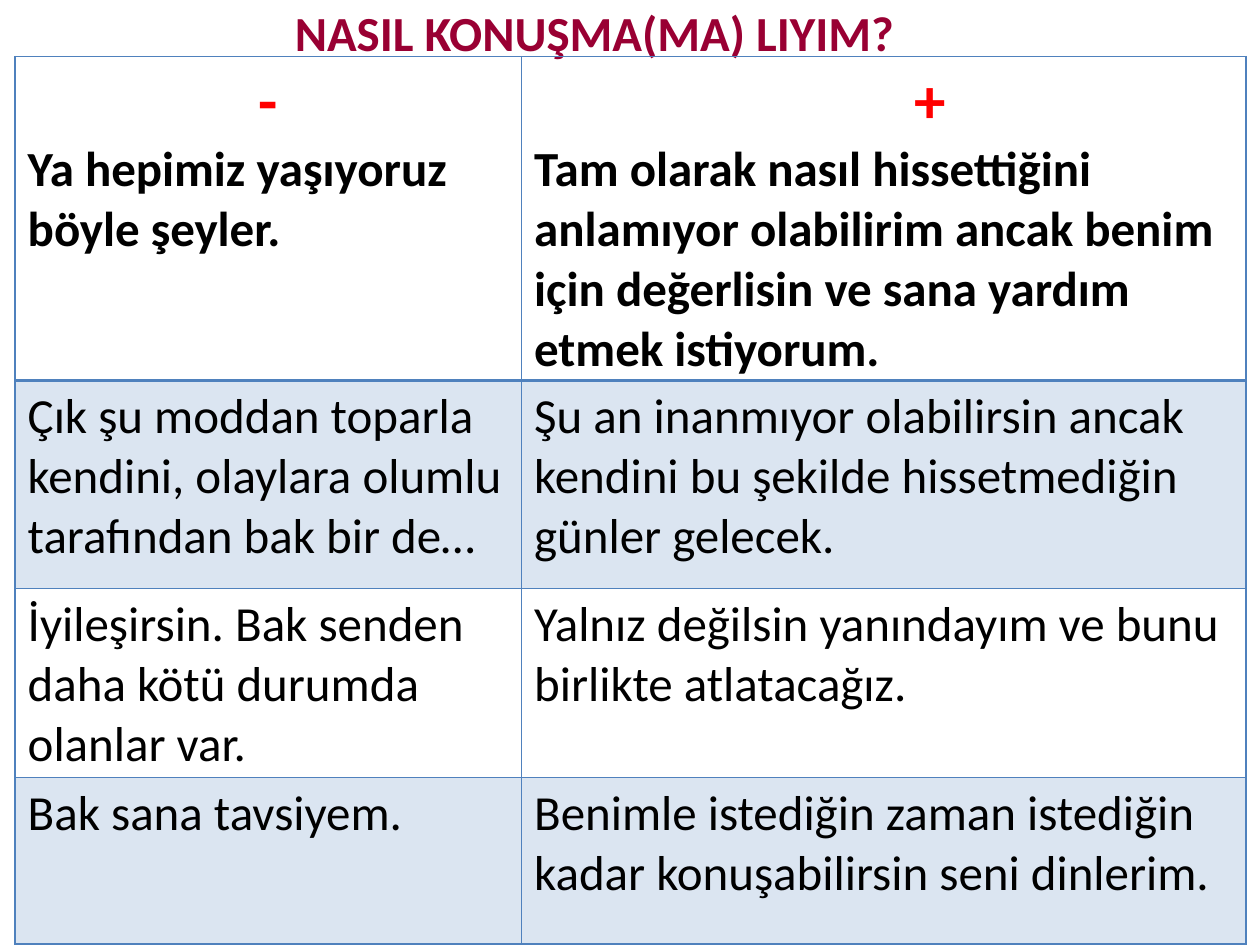
from lxml import etree
from pptx import Presentation
from pptx.dml.color import RGBColor
from pptx.enum.text import MSO_ANCHOR, MSO_AUTO_SIZE, PP_ALIGN
from pptx.oxml.ns import qn
from pptx.util import Inches, Pt

LEFT, CENTER = PP_ALIGN.LEFT, PP_ALIGN.CENTER
MIDDLE = MSO_ANCHOR.MIDDLE
FIT_SHAPE = MSO_AUTO_SIZE.SHAPE_TO_FIT_TEXT
TITLE_ONLY = 5

TITLE = "NASIL KONUŞMA(MA) LIYIM?"
SIGNS = ("-", "+")
ADVICE = [
    ("Ya hepimiz yaşıyoruz böyle şeyler.",
     "Tam olarak nasıl hissettiğini anlamıyor olabilirim ancak benim için "
     "değerlisin ve sana yardım etmek istiyorum."),
    ("Çık şu moddan toparla kendini, olaylara olumlu tarafından bak bir de…",
     "Şu an inanmıyor olabilirsin ancak kendini bu şekilde hissetmediğin "
     "günler gelecek."),
    ("İyileşirsin. Bak senden daha kötü durumda olanlar var.",
     "Yalnız değilsin yanındayım ve bunu birlikte atlatacağız."),
    ("Bak sana tavsiyem.",
     "Benimle istediğin zaman istediğin kadar konuşabilirsin seni dinlerim."),
]
COLUMN_WIDTHS = (4.02, 5.75)
ROW_HEIGHTS = (2.57, 1.65, 1.5, 1.32)
PLUS_INDENT = 3.02


def color(value):
    return RGBColor.from_string(value)


class AdviceSlide:
    font = "Calibri"
    text_size, sign_size = 28, 36
    title_color, sign_color, text_color = "990033", "FF0000", "000000"
    accent, band_opacity = "4F81BD", 20

    def __init__(self, presentation):
        layout = presentation.slide_layouts[TITLE_ONLY]
        self.slide = presentation.slides.add_slide(layout)

    def format_paragraph(self, paragraph, size, hex_color, bold, alignment=LEFT):
        paragraph.alignment = alignment
        for run in paragraph.runs:
            run.font.name = self.font
            run.font.size = Pt(size)
            run.font.bold = bold
            run.font.color.rgb = color(hex_color)

    def add_title(self, text, left, top, width, height):
        title = self.slide.shapes.title
        title.left, title.top = Inches(left), Inches(top)
        title.width, title.height = Inches(width), Inches(height)
        frame = title.text_frame
        frame.text = text
        frame.word_wrap = False
        frame.auto_size = FIT_SHAPE
        frame.vertical_anchor = MIDDLE
        self.format_paragraph(frame.paragraphs[0], self.text_size,
                              self.title_color, True)

    def add_table(self, rows, left, top):
        table = self.slide.shapes.add_table(
            len(rows), len(COLUMN_WIDTHS), Inches(left), Inches(top),
            Inches(sum(COLUMN_WIDTHS)), Inches(sum(ROW_HEIGHTS))).table
        table.first_row = table.horz_banding = False
        for column, width in zip(table.columns, COLUMN_WIDTHS):
            column.width = Inches(width)
        for index, (row, height) in enumerate(zip(table.rows, ROW_HEIGHTS)):
            row.height = Inches(height)
            for cell, text in zip(row.cells, rows[index]):
                cell.text_frame.text = text
                self.format_paragraph(cell.text_frame.paragraphs[0],
                                      self.text_size, self.text_color, index == 0)
                self.fill_cell(cell, banded=index % 2 == 1)
                self.add_borders(cell, top=2 if index == 1 else 1,
                                 bottom=2 if index == 0 else 1)
        return table

    def add_sign(self, cell, sign, alignment, indent):
        frame = cell.text_frame
        text = frame.text
        frame.text = sign
        advice = frame.add_paragraph()
        advice.text = text
        heading = frame.paragraphs[0]
        self.format_paragraph(heading, self.sign_size, self.sign_color, True, alignment)
        self.format_paragraph(advice, self.text_size, self.text_color, True)
        if indent:
            heading._p.get_or_add_pPr().set("marL", str(Inches(indent)))

    def fill_cell(self, cell, banded):
        if not banded:
            cell.fill.background()
            return
        cell.fill.solid()
        cell.fill.fore_color.rgb = color(self.accent)
        shade = cell._tc.tcPr.find(".//" + qn("a:srgbClr"))
        etree.SubElement(shade, qn("a:alpha"), val=str(self.band_opacity * 1000))

    def add_borders(self, cell, top, bottom):
        properties = cell._tc.get_or_add_tcPr()
        edges = (("a:lnL", 1), ("a:lnR", 1), ("a:lnT", top), ("a:lnB", bottom))
        for position, (tag, width) in enumerate(edges):
            line = etree.Element(qn(tag), w=str(Pt(width)))
            fill = etree.SubElement(line, qn("a:solidFill"))
            etree.SubElement(fill, qn("a:srgbClr"), val=self.accent)
            properties.insert(position, line)


def main():
    presentation = Presentation()
    presentation.slide_width, presentation.slide_height = Inches(10), Inches(7.5)
    page = AdviceSlide(presentation)
    page.add_title(TITLE, 2.24, -0.03, 5.02, 0.57)
    table = page.add_table(ADVICE, 0.12, 0.45)
    page.add_sign(table.cell(0, 0), SIGNS[0], CENTER, 0)
    page.add_sign(table.cell(0, 1), SIGNS[1], LEFT, PLUS_INDENT)
    presentation.save("out.pptx")


if __name__ == "__main__":
    main()
